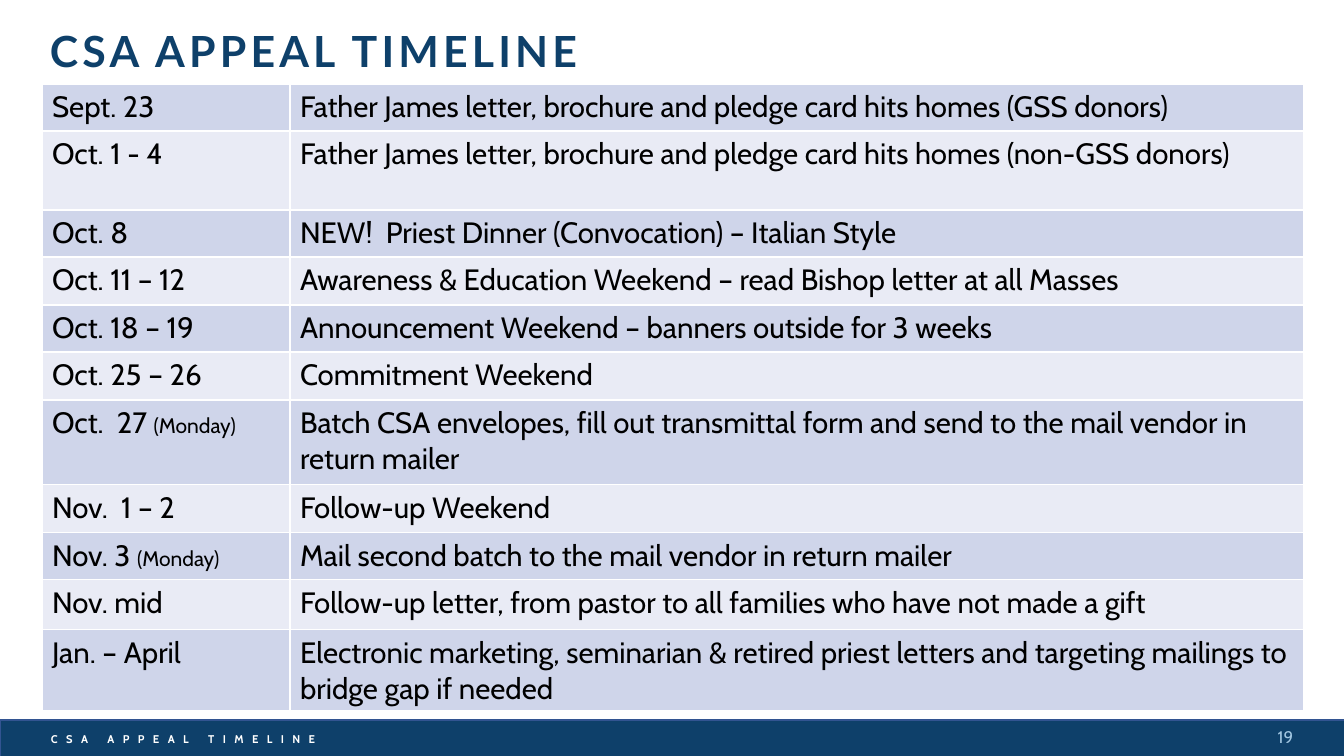
"""Build the CSA appeal timeline slide."""
from lxml import etree
from pptx import Presentation
from pptx.dml.color import RGBColor
from pptx.enum.shapes import MSO_SHAPE
from pptx.enum.text import MSO_ANCHOR, PP_ALIGN
from pptx.oxml.ns import qn
from pptx.util import Pt

PX = 9071
RECTANGLE = MSO_SHAPE.RECTANGLE
TOP, MIDDLE = MSO_ANCHOR.TOP, MSO_ANCHOR.MIDDLE
LEFT, RIGHT = PP_ALIGN.LEFT, PP_ALIGN.RIGHT

NAVY = RGBColor(0x0E, 0x40, 0x6A)
BAR_EDGE = RGBColor(0x32, 0x54, 0x91)
PALE_BLUE = RGBColor(0xA2, 0xC7, 0xE2)
WHITE = RGBColor(0xFF, 0xFF, 0xFF)
BLACK = RGBColor(0x00, 0x00, 0x00)
BANDS = (RGBColor(0xCF, 0xD5, 0xEA), RGBColor(0xE9, 0xEB, 0xF5))

HEADING = "CSA APPEAL TIMELINE"
COLUMN_WIDTHS = (248, 1014)
TIMELINE = (
    (47, "Sept. 23", "", "Father James letter, brochure and pledge card hits homes (GSS donors)"),
    (79, "Oct. 1 - 4", "", "Father James letter, brochure and pledge card hits homes (non-GSS donors)"),
    (47, "Oct. 8", "", "NEW!  Priest Dinner (Convocation) – Italian Style"),
    (48, "Oct. 11 – 12", "", "Awareness & Education Weekend – read Bishop letter at all Masses"),
    (47, "Oct. 18 – 19", "", "Announcement Weekend – banners outside for 3 weeks"),
    (48, "Oct. 25 – 26", "", "Commitment Weekend"),
    (85, "Oct.  27 ", "(Monday)",
     "Batch CSA envelopes, fill out transmittal form and send to the mail vendor in return mailer"),
    (48, "Nov.  1 – 2", "", "Follow-up Weekend"),
    (47, "Nov. 3 ", "(Monday)", "Mail second batch to the mail vendor in return mailer"),
    (50, "Nov. mid", "", "Follow-up letter, from pastor to all families who have not made a gift"),
    (81, "Jan. – April", "",
     "Electronic marketing, seminarian & retired priest letters and targeting mailings to bridge gap if needed"),
)


def scaled(*lengths):
    """Turn px lengths into EMU."""
    return [length * PX for length in lengths]


def style_span(span, size, color, font="Cabin", bold=False, spacing=0):
    """Format one run, with letter spacing in points."""
    span.font.name = font
    span.font.size = Pt(size)
    span.font.bold = bold
    span.font.color.rgb = color
    if spacing:
        span.font._element.set("spc", str(spacing * 100))


def add_text(page, place, text, anchor=TOP, align=LEFT, line_spacing=1.0, **style):
    """Add a one-paragraph text box."""
    box = page.shapes.add_textbox(*scaled(*place))
    frame = box.text_frame
    frame.word_wrap = True
    frame.vertical_anchor = anchor
    frame.text = text
    para = frame.paragraphs[0]
    para.alignment = align
    para.line_spacing = line_spacing
    style_span(para.runs[0], **style)


def add_footer_bar(page):
    """Add the navy bar along the bottom edge."""
    bar = page.shapes.add_shape(RECTANGLE, *scaled(0, 720, 1347, 39))
    bar.shadow.inherit = False
    bar.fill.solid()
    bar.fill.fore_color.rgb = NAVY
    bar.line.color.rgb = BAR_EDGE
    bar.line.width = Pt(1)


def add_borders(cell):
    """Give a cell white borders one point wide."""
    properties = cell._tc.get_or_add_tcPr()
    for index, side in enumerate(("a:lnL", "a:lnR", "a:lnT", "a:lnB")):
        line = etree.Element(qn(side), w=str(Pt(1)))
        fill = etree.SubElement(line, qn("a:solidFill"))
        etree.SubElement(fill, qn("a:srgbClr"), val=str(WHITE))
        properties.insert(index, line)


def fill_cell(cell, color, text, note=""):
    """Set the fill, borders and text of a cell, with an optional small note."""
    cell.fill.solid()
    cell.fill.fore_color.rgb = color
    add_borders(cell)
    cell.text_frame.text = text
    para = cell.text_frame.paragraphs[0]
    style_span(para.runs[0], 21, BLACK)
    if note:
        span = para.add_run()
        span.text = note
        style_span(span, 15, BLACK)


def add_timeline(page):
    """Add the table of dates and events."""
    height = sum(entry[0] for entry in TIMELINE)
    place = scaled(42, 84, sum(COLUMN_WIDTHS), height)
    table = page.shapes.add_table(len(TIMELINE), len(COLUMN_WIDTHS), *place).table
    table.first_row = False
    for column, width in zip(table.columns, COLUMN_WIDTHS):
        column.width = width * PX
    for index, (row_height, date, note, event) in enumerate(TIMELINE):
        table.rows[index].height = row_height * PX
        color = BANDS[index % 2]
        fill_cell(table.cell(index, 0), color, date, note)
        fill_cell(table.cell(index, 1), color, event)


def main():
    """Build and save the deck."""
    deck = Presentation()
    deck.slide_width, deck.slide_height = scaled(1344, 756)
    page = deck.slides.add_slide(deck.slide_layouts[6])
    add_footer_bar(page)
    add_text(page, (40, 31, 1262, 51), HEADING, anchor=MIDDLE, line_spacing=0.7,
             size=30.6, color=NAVY, font="Lato", bold=True, spacing=3)
    add_timeline(page)
    add_text(page, (1102, 717, 201, 40), "19", anchor=MIDDLE, align=RIGHT,
             size=12, color=PALE_BLUE)
    add_text(page, (41, 727, 438, 24), HEADING,
             size=8, color=WHITE, bold=True, spacing=6)
    deck.save("out.pptx")


if __name__ == "__main__":
    main()
